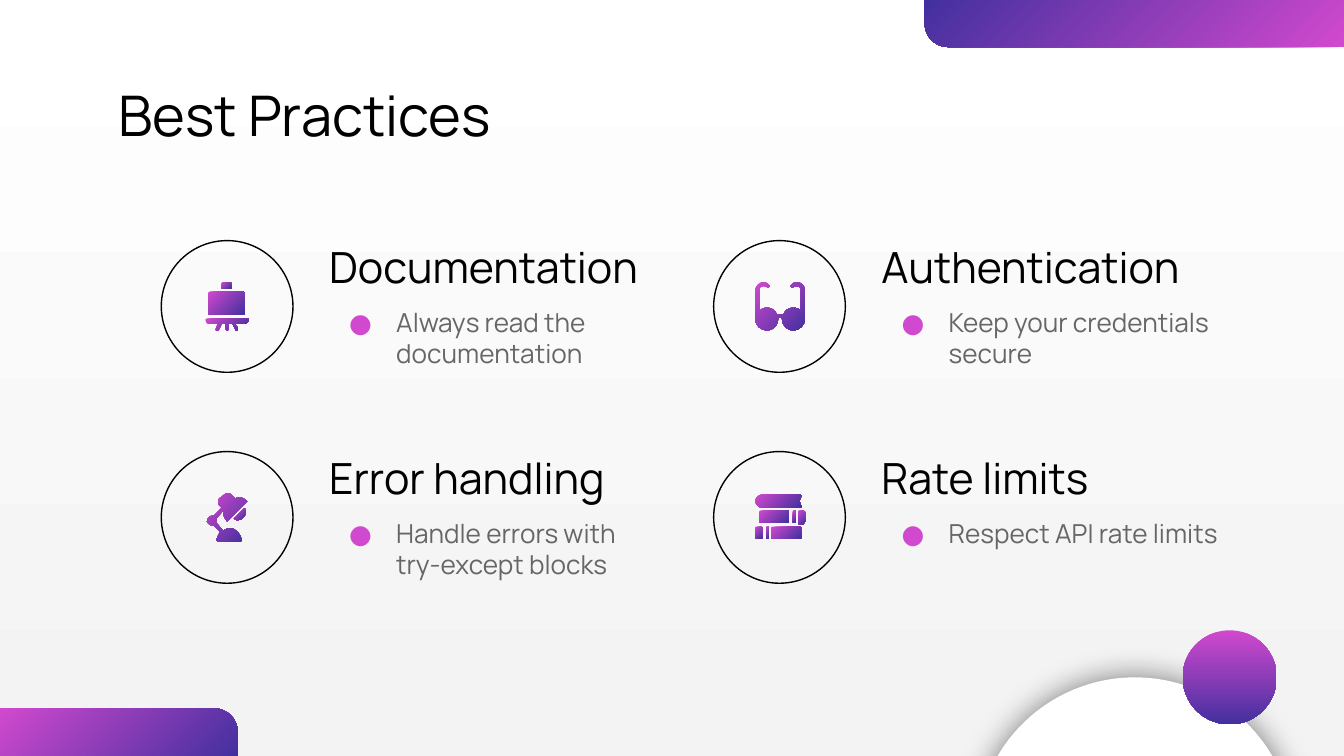
from lxml import etree
from pptx import Presentation
from pptx.dml.color import RGBColor
from pptx.enum.shapes import MSO_SHAPE
from pptx.enum.text import MSO_ANCHOR, MSO_AUTO_SIZE, PP_ALIGN
from pptx.oxml.ns import qn
from pptx.util import Inches, Pt

OVAL, ROUND_ONE = MSO_SHAPE.OVAL, MSO_SHAPE.ROUND_1_RECTANGLE
LEFT, TOP, MIDDLE = PP_ALIGN.LEFT, MSO_ANCHOR.TOP, MSO_ANCHOR.MIDDLE
NO_FIT = MSO_AUTO_SIZE.NONE

FONT = "Manrope"
PINK, PURPLE, BLACK, GREY, WHITE = "D149CE", "43309F", "000000", "666666", "FFFFFF"
BACKDROP_END = "F3F3F3"

TITLE = "Best Practices"
# heading, heading width, advice, advice width, advice height; row by row
PRACTICES = [
    ("Documentation", 3.15, "Always read the documentation", 2.34, 0.65),
    ("Authentication", 2.79, "Keep your credentials secure", 3.04, 0.87),
    ("Error handling", 3.49, "Handle errors with try-except blocks", 2.47, 0.65),
    ("Rate limits", 2.34, "Respect API rate limits", 3.11, 0.65),
]
COLUMNS, ROWS = (1.2, 5.31), (1.79, 3.36)
CIRCLE, TEXT_OFFSET, HEADING_H = 0.98, 1.15, 0.39


def box(left, top, right, bottom):
    return [(left, top), (right, top), (right, bottom), (left, bottom)]


# Outlines in inches: two numbers are a point, six are a Bezier curve
EASEL = [
    [(1.56, 2.17), (1.56, 2.17, 1.55, 2.18, 1.55, 2.18), (1.55, 2.34), (1.82, 2.34),
     (1.82, 2.18), (1.82, 2.17, 1.82, 2.17, 1.81, 2.17)],
    [(1.53, 2.37), (1.53, 2.38), (1.53, 2.4, 1.55, 2.41, 1.56, 2.41), (1.62, 2.41),
     (1.61, 2.44), (1.6, 2.45, 1.61, 2.46, 1.61, 2.46),
     (1.62, 2.46, 1.63, 2.46, 1.63, 2.45), (1.65, 2.41), (1.68, 2.41), (1.68, 2.45),
     (1.68, 2.46, 1.7, 2.46, 1.7, 2.45), (1.7, 2.41), (1.73, 2.41), (1.75, 2.45),
     (1.75, 2.46, 1.76, 2.46, 1.76, 2.46), (1.77, 2.46, 1.77, 2.45, 1.77, 2.44),
     (1.75, 2.41), (1.81, 2.41), (1.83, 2.41, 1.85, 2.4, 1.85, 2.38),
     (1.85, 2.37, 1.84, 2.37, 1.84, 2.37)],
    [(1.66, 2.1), (1.66, 2.1, 1.65, 2.1, 1.65, 2.11), (1.65, 2.15), (1.72, 2.15),
     (1.72, 2.11), (1.72, 2.1, 1.72, 2.1, 1.71, 2.1)],
]
GLASSES = [
    [(5.68, 2.1), (5.65, 2.1, 5.62, 2.13, 5.62, 2.16), (5.62, 2.38),
     (5.62, 2.42, 5.66, 2.46, 5.71, 2.46), (5.75, 2.46, 5.79, 2.42, 5.79, 2.38),
     (5.79, 2.37, 5.8, 2.36, 5.81, 2.36), (5.81, 2.36, 5.82, 2.37, 5.82, 2.38),
     (5.82, 2.42, 5.86, 2.46, 5.9, 2.46), (5.95, 2.46, 5.99, 2.42, 5.99, 2.37),
     (5.99, 2.16), (5.99, 2.13, 5.96, 2.1, 5.93, 2.1),
     (5.91, 2.1, 5.9, 2.11, 5.89, 2.12), (5.88, 2.12, 5.88, 2.13, 5.89, 2.14),
     (5.9, 2.14), (5.91, 2.13, 5.92, 2.13, 5.93, 2.13),
     (5.95, 2.13, 5.96, 2.14, 5.96, 2.16), (5.96, 2.32),
     (5.95, 2.3, 5.93, 2.29, 5.9, 2.29), (5.87, 2.29, 5.84, 2.31, 5.83, 2.34),
     (5.78, 2.34), (5.77, 2.31, 5.74, 2.29, 5.71, 2.29),
     (5.68, 2.29, 5.66, 2.3, 5.65, 2.32), (5.65, 2.16),
     (5.65, 2.14, 5.66, 2.13, 5.68, 2.13), (5.69, 2.13, 5.7, 2.13, 5.71, 2.14),
     (5.72, 2.14), (5.73, 2.13, 5.73, 2.12, 5.72, 2.12),
     (5.71, 2.11, 5.7, 2.1, 5.68, 2.1)],
]
LAMP = [
    [(1.69, 3.67), (1.69, 3.67, 1.68, 3.67, 1.67, 3.68), (1.63, 3.71),
     (1.62, 3.72, 1.62, 3.75, 1.63, 3.76), (1.65, 3.78), (1.59, 3.84), (1.57, 3.84),
     (1.56, 3.84, 1.54, 3.86, 1.54, 3.88), (1.54, 3.89, 1.56, 3.91, 1.58, 3.91),
     (1.59, 3.91), (1.64, 3.96), (1.63, 3.97, 1.62, 3.99, 1.61, 4.02),
     (1.61, 4.02, 1.62, 4.03, 1.63, 4.03), (1.79, 4.03),
     (1.79, 4.03, 1.8, 4.02, 1.8, 4.02), (1.79, 3.97, 1.75, 3.93, 1.71, 3.93),
     (1.69, 3.93, 1.68, 3.94, 1.66, 3.95), (1.61, 3.89),
     (1.61, 3.88, 1.61, 3.87, 1.61, 3.86), (1.66, 3.8),
     (1.66, 3.83, 1.67, 3.86, 1.69, 3.88), (1.84, 3.73),
     (1.82, 3.71, 1.8, 3.7, 1.77, 3.7), (1.76, 3.7, 1.76, 3.71, 1.75, 3.71),
     (1.72, 3.68), (1.71, 3.67, 1.7, 3.67, 1.69, 3.67)],
    [(1.82, 3.78), (1.74, 3.86), (1.75, 3.87, 1.76, 3.87, 1.77, 3.87),
     (1.79, 3.87, 1.8, 3.86, 1.81, 3.85), (1.83, 3.83, 1.84, 3.8, 1.82, 3.78)],
]
BOOKS = [
    [(5.67, 3.68), (5.65, 3.68, 5.62, 3.7, 5.62, 3.73),
     (5.62, 3.75, 5.65, 3.78, 5.67, 3.78), (5.95, 3.78),
     (5.96, 3.78, 5.97, 3.77, 5.96, 3.76), (5.96, 3.75, 5.95, 3.74, 5.95, 3.73),
     (5.95, 3.72, 5.96, 3.71, 5.96, 3.7), (5.97, 3.69, 5.96, 3.68, 5.95, 3.68)],
    box(5.9, 3.8, 5.92, 3.89),
    [(5.94, 3.8), (5.94, 3.9), (5.98, 3.9), (5.98, 3.89, 5.99, 3.89, 5.99, 3.88),
     (5.99, 3.81), (5.99, 3.81, 5.98, 3.8, 5.98, 3.8)],
    [(5.66, 3.8), (5.65, 3.8, 5.65, 3.81, 5.65, 3.81), (5.65, 3.88),
     (5.65, 3.89, 5.65, 3.89, 5.66, 3.89), (5.87, 3.89), (5.87, 3.8)],
    box(5.7, 3.92, 5.72, 4.01),
    [(5.74, 3.92), (5.74, 4.01), (5.95, 4.01), (5.96, 4.01, 5.96, 4.01, 5.96, 4),
     (5.96, 3.93), (5.96, 3.92, 5.96, 3.92, 5.95, 3.92)],
    [(5.64, 3.92), (5.63, 3.92, 5.62, 3.92, 5.62, 3.93), (5.62, 4),
     (5.62, 4.01, 5.63, 4.01, 5.64, 4.01), (5.67, 4.01), (5.67, 3.92)],
]


def rgb(value):
    return RGBColor.from_string(value)


def set_gradient(fill, start, end, angle):
    """Fill from start to end; the angle runs clockwise."""
    fill.gradient()
    fill.gradient_angle = 360 - angle
    for stop, color in zip(fill.gradient_stops, (start, end)):
        stop.color.rgb = rgb(color)


def make_plain(sp):
    sp.shadow.inherit = False
    sp.line.fill.background()


def add_shape(kind, *at):
    sp = slide.shapes.add_shape(kind, *map(Inches, at))
    make_plain(sp)
    return sp


def add_outline(nodes):
    points = [nodes[0]]
    for node in nodes[1:]:
        if len(node) == 2:
            points.append(node)
            continue
        controls = [points[-1], node[:2], node[2:4], node[4:]]
        for t in (0.25, 0.5, 0.75, 1):
            weights = ((1 - t) ** 3, 3 * t * (1 - t) ** 2, 3 * t * t * (1 - t), t ** 3)
            points.append(tuple(sum(w * c[i] for w, c in zip(weights, controls))
                                for i in (0, 1)))
    points = [(Inches(x), Inches(y)) for x, y in points]
    builder = slide.shapes.build_freeform(*points[0])
    builder.add_line_segments(points[1:], close=True)
    sp = builder.convert_to_shape()
    make_plain(sp)
    set_gradient(sp.fill, PINK, PURPLE, 45)


def set_text(sp, text, at, size, color, anchor, bullet=False):
    sp.left, sp.top, sp.width, sp.height = map(Inches, at)
    tf = sp.text_frame
    settings = {"word_wrap": True, "auto_size": NO_FIT, "vertical_anchor": anchor}
    settings |= {f"margin_{side}": Inches(0.1) for side in ("left", "top", "right", "bottom")}
    for name, value in settings.items():
        setattr(tf, name, value)
    p = tf.paragraphs[0]
    p.alignment = LEFT
    if bullet:
        pPr = p._p.get_or_add_pPr()
        pPr.set("marL", str(Inches(0.5)))
        pPr.set("indent", str(Inches(-0.35)))
        bu_color = etree.SubElement(pPr, qn("a:buClr"))
        etree.SubElement(bu_color, qn("a:srgbClr"), val=PINK)
        etree.SubElement(pPr, qn("a:buFont"), typeface=FONT)
        etree.SubElement(pPr, qn("a:buChar"), char="●")
    r = p.add_run()
    r.text = text
    r.font.name, r.font.size, r.font.color.rgb = FONT, Pt(size), rgb(color)


def add_text(*args, **kwargs):
    set_text(slide.shapes.add_textbox(0, 0, 0, 0), *args, **kwargs)


prs = Presentation()
prs.slide_width, prs.slide_height = Inches(10), Inches(10 * 9 / 16)
slide = prs.slides.add_slide(prs.slide_layouts[5])
set_gradient(slide.background.fill, WHITE, BACKDROP_END, 90)

for at, rotation in (((0, 5.27, 1.77, 0.36), 0), ((6.88, 0, 3.12, 0.35), 180)):
    corner = add_shape(ROUND_ONE, *at)
    corner.adjustments[0] = 0.5
    corner.rotation = rotation
    set_gradient(corner.fill, PINK, PURPLE, 45)

disc = add_shape(OVAL, 7.26, 5.04, 2.37, 2.37)
disc.fill.solid()
disc.fill.fore_color.rgb = rgb(WHITE)
effects = disc._element.spPr.find(qn("a:effectLst"))
glow = etree.SubElement(effects, qn("a:outerShdw"), blurRad=str(Pt(16.9)), dist="0", dir="0",
                        algn="ctr", rotWithShape="0")
glow_color = etree.SubElement(glow, qn("a:srgbClr"), val=BLACK)
etree.SubElement(glow_color, qn("a:alpha"), val="50000")

set_text(slide.shapes.title, TITLE, (0.78, 0.59, 8.44, 0.52), 30, BLACK, MIDDLE)

cells = [(x, y) for y in ROWS for x in COLUMNS]
for (x, y), (heading, heading_w, advice, advice_w, advice_h) in zip(cells, PRACTICES):
    text_x = x + TEXT_OFFSET
    add_text(heading, (text_x, y, heading_w, HEADING_H), 23, BLACK, MIDDLE)
    add_text(advice, (text_x, y + HEADING_H, advice_w, advice_h), 14, GREY, TOP, bullet=True)
    ring = add_shape(OVAL, x, y, CIRCLE, CIRCLE)
    ring.fill.background()
    ring.line.color.rgb = rgb(BLACK)
    ring.line.width = Pt(0.75)

for icon in (EASEL, GLASSES, LAMP, BOOKS):
    for nodes in icon:
        add_outline(nodes)

ball = add_shape(OVAL, 8.8, 4.69, 0.7, 0.7)
set_gradient(ball.fill, PINK, PURPLE, 90)

prs.save("out.pptx")
